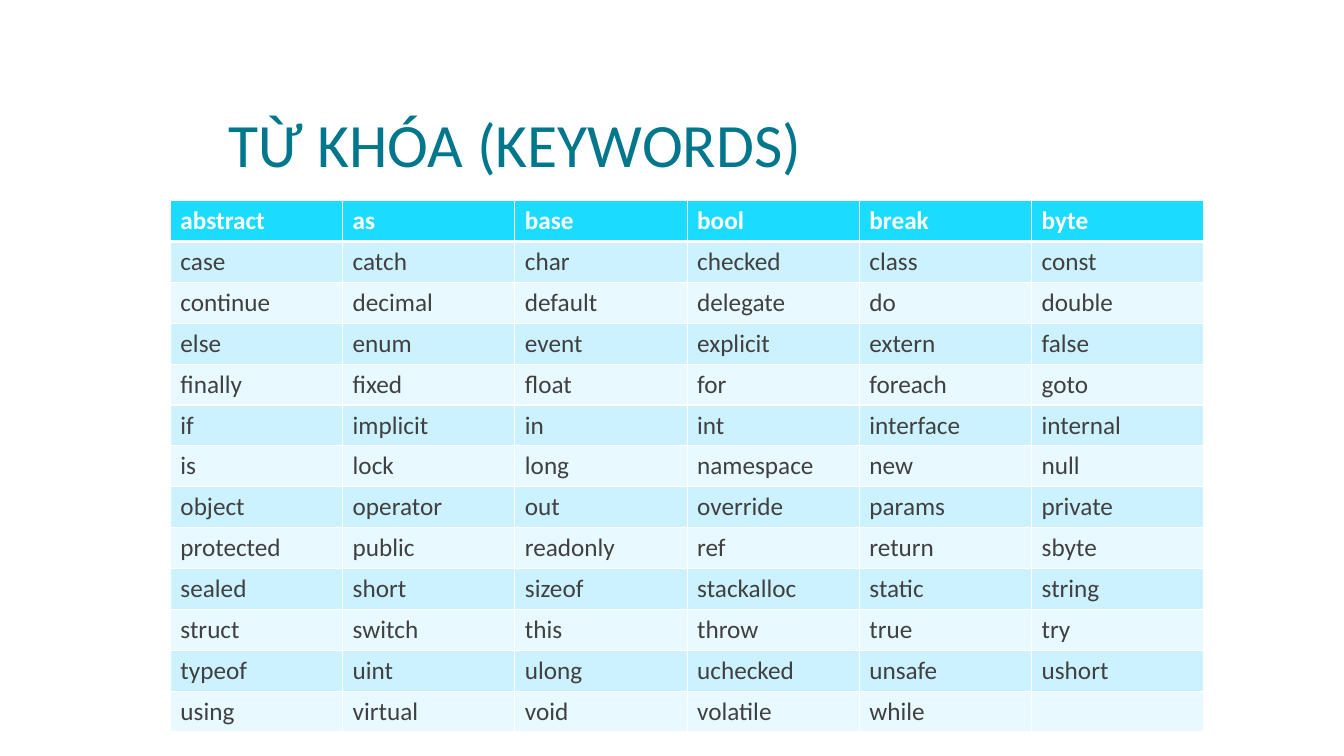
from dataclasses import dataclass

from lxml.etree import SubElement
from pptx import Presentation
from pptx.dml.color import RGBColor
from pptx.enum.text import MSO_ANCHOR as Anchor, MSO_AUTO_SIZE as AutoSize, PP_ALIGN as Align
from pptx.oxml.ns import qn
from pptx.util import Inches, Pt

FONT = "Calibri"
COLORS = {
    "title": "00778D",
    "header": "1BDCFF",
    "odd": "CDF2FF",
    "even": "E8F9FF",
    "body": "404040",
    "white": "FFFFFF",
}
KEYWORDS = """
abstract as base bool break byte
case catch char checked class const
continue decimal default delegate do double
else enum event explicit extern false
finally fixed float for foreach goto
if implicit in int interface internal
is lock long namespace new null
object operator out override params private
protected public readonly ref return sbyte
sealed short sizeof stackalloc static string
struct switch this throw true try
typeof uint ulong uchecked unsafe ushort
using virtual void volatile while
"""


@dataclass(frozen=True)
class RowStyle:
    fill: str
    text: str
    bold: bool = False
    top: float = 1
    bottom: float = 1


HEADER = RowStyle("header", "white", bold=True, bottom=3)
FIRST = RowStyle("odd", "body", top=3)
ODD = RowStyle("odd", "body")
EVEN = RowStyle("even", "body")


def row_style(index: int) -> RowStyle:
    if index < 2:
        return (HEADER, FIRST)[index]
    return ODD if index % 2 else EVEN


def add_span(para, text: str, size: float, color: str, bold: bool = False) -> None:
    span = para.add_run()
    span.text = text
    span.font.name = FONT
    span.font.size = Pt(size)
    span.font.bold = bold
    span.font.color.rgb = RGBColor.from_string(COLORS[color])


def add_borders(cell, style: RowStyle) -> None:
    properties = cell._tc.get_or_add_tcPr()
    widths = {"lnL": 1, "lnR": 1, "lnT": style.top, "lnB": style.bottom}
    for side, width in widths.items():
        line = SubElement(properties, qn(f"a:{side}"), w=str(Pt(width)))
        fill = SubElement(line, qn("a:solidFill"))
        SubElement(fill, qn("a:srgbClr"), val=COLORS["white"])


def format_cell(cell, text: str, style: RowStyle) -> None:
    add_borders(cell, style)
    cell.fill.solid()
    cell.fill.fore_color.rgb = RGBColor.from_string(COLORS[style.fill])
    para = cell.text_frame.paragraphs[0]
    if text:
        add_span(para, text, 18, style.text, style.bold)
    else:
        para.font.size = Pt(18)


def format_title(title, text: str) -> None:
    title.left, title.top = Inches(2.17), Inches(0.42)
    title.width, title.height = Inches(10.25), Inches(1.42)
    frame = title.text_frame
    frame.word_wrap = True
    frame.auto_size = AutoSize.NONE
    frame.vertical_anchor = Anchor.BOTTOM
    para = frame.paragraphs[0]
    para.alignment = Align.LEFT
    para.line_spacing = 0.85
    add_span(para, text, 44, "title")


def add_keyword_table(page, rows: list[list[str]]) -> None:
    columns = len(rows[0])
    width, height = Inches(10.25), Inches(5.27)
    table = page.shapes.add_table(
        len(rows), columns, Inches(1.69), Inches(1.99), width, height
    ).table
    for column in table.columns:
        column.width = width // columns
    for index, words in enumerate(rows):
        table.rows[index].height = height // len(rows)
        padded = words + [""] * (columns - len(words))
        for cell, word in zip(table.rows[index].cells, padded):
            format_cell(cell, word, row_style(index))


def main() -> None:
    deck = Presentation()
    deck.slide_width, deck.slide_height = Inches(13.33), Inches(7.5)
    page = deck.slides.add_slide(deck.slide_layouts.get_by_name("Title Only"))
    format_title(page.shapes.title, "TỪ KHÓA (KEYWORDS)")
    add_keyword_table(page, [line.split() for line in KEYWORDS.strip().splitlines()])
    deck.save("out.pptx")


if __name__ == "__main__":
    main()
